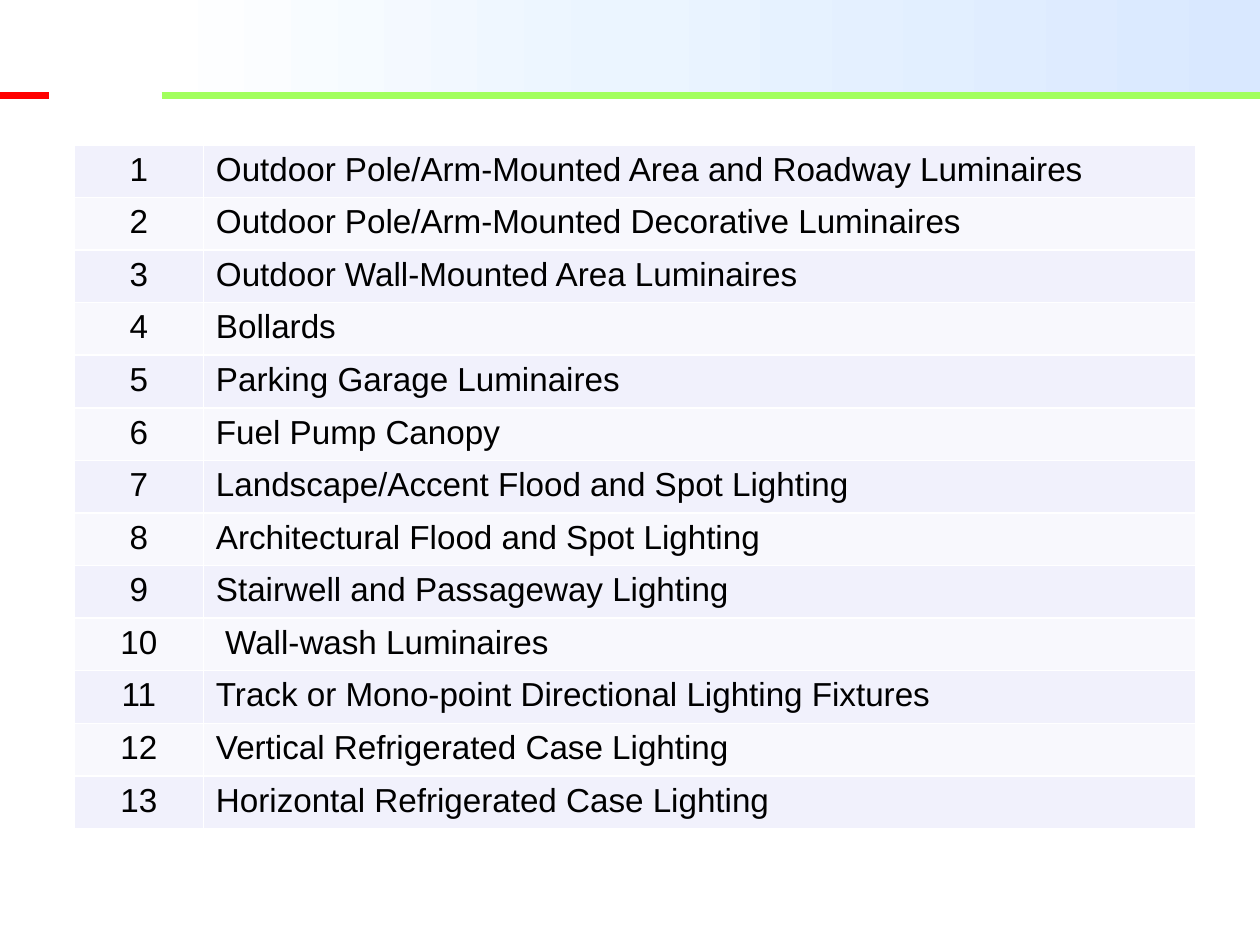
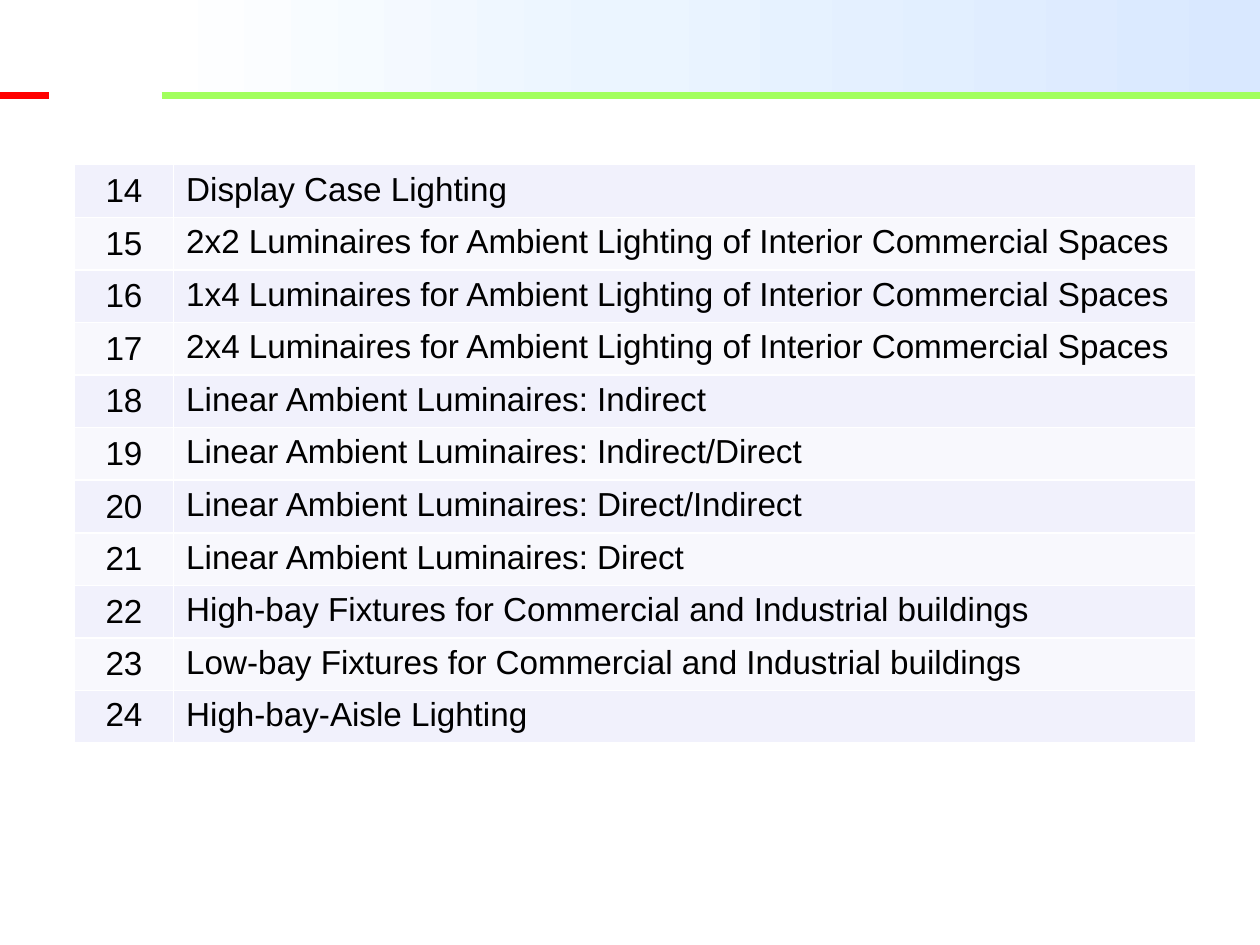
from copy import deepcopy
from dataclasses import dataclass

from lxml.etree import SubElement
from pptx import Presentation
from pptx.dml.color import RGBColor
from pptx.enum.shapes import MSO_CONNECTOR, MSO_SHAPE
from pptx.enum.text import MSO_ANCHOR, PP_ALIGN
from pptx.oxml.ns import qn
from pptx.slide import Slide
from pptx.table import _Cell as Cell
from pptx.util import Cm, Pt

# Shared colours
BLACK = RGBColor(0x00, 0x00, 0x00)
WHITE = RGBColor(0xFF, 0xFF, 0xFF)
RED = RGBColor(0xFF, 0x00, 0x00)
GREEN = RGBColor(0xA2, 0xFF, 0x5D)
ROW_FILLS = (RGBColor(0xF1, 0xF1, 0xFC), RGBColor(0xF8, 0xF8, 0xFD))
FADE = (
    (0, RGBColor(0xD9, 0xE8, 0xFF)),
    (0.51, RGBColor(0xEB, 0xF5, 0xFF)),
    (0.88, WHITE),
)

# Shared text format and lengths
BODY = {"name": "Arial", "size": Pt(19), "bold": False}
WIDE, HIGH = Cm(25.4), Cm(19.05)
RULE_Y = Cm(1.93)
LEFT, TOTAL, ROW_H = Cm(1.5), Cm(22.6), Cm(1.06)


@dataclass(frozen=True)
class Rule:
    start: int
    end: int
    color: RGBColor


@dataclass(frozen=True)
class Listing:
    top: int
    num_w: int
    first: int
    middle: int  # how many leading number cells are centred vertically
    names: tuple[str, ...]


RULES = (Rule(0, Cm(0.99), RED), Rule(Cm(3.26), WIDE, GREEN))

LISTS = (
    Listing(Cm(2.92), Cm(2.6), 1, 0, (
        "Outdoor Pole/Arm-Mounted Area and Roadway Luminaires",
        "Outdoor Pole/Arm-Mounted Decorative Luminaires",
        "Outdoor Wall-Mounted Area Luminaires",
        "Bollards",
        "Parking Garage Luminaires",
        "Fuel Pump Canopy",
        "Landscape/Accent Flood and Spot Lighting",
        "Architectural Flood and Spot Lighting",
        "Stairwell and Passageway Lighting",
        " Wall-wash Luminaires",
        "Track or Mono-point Directional Lighting Fixtures",
        "Vertical Refrigerated Case Lighting",
        "Horizontal Refrigerated Case Lighting",
    )),
    Listing(Cm(3.32), Cm(2), 14, 10, (
        "Display Case Lighting",
        *(f"{size} Luminaires for Ambient Lighting of Interior Commercial Spaces"
          for size in ("2x2", "1x4", "2x4")),
        *(f"Linear Ambient Luminaires: {beam}"
          for beam in ("Indirect", "Indirect/Direct", "Direct/Indirect", "Direct")),
        *(f"{bay}-bay Fixtures for Commercial and Industrial buildings"
          for bay in ("High", "Low")),
        "High-bay-Aisle Lighting",
    )),
)


def write(cell: Cell, text: str, align: PP_ALIGN) -> None:
    para = cell.text_frame.paragraphs[0]
    para.alignment = align
    run = para.add_run()
    run.text = text
    for key, value in BODY.items():
        setattr(run.font, key, value)
    run.font.color.rgb = BLACK


def add_band(slide: Slide) -> None:
    band = slide.shapes.add_shape(MSO_SHAPE.RECTANGLE, 0, 0, WIDE, RULE_Y)
    band.shadow.inherit = False
    band.line.fill.background()
    band.fill.gradient()
    band.fill.gradient_angle = 180
    stops = band._element.spPr.find(qn("a:gradFill")).find(qn("a:gsLst"))
    stops.append(deepcopy(stops[0]))
    for stop, (place, color) in zip(band.fill.gradient_stops, FADE):
        stop.position = place
        stop.color.rgb = color


def add_rule(slide: Slide, rule: Rule) -> None:
    line = slide.shapes.add_connector(
        MSO_CONNECTOR.STRAIGHT, rule.start, RULE_Y, rule.end, RULE_Y)
    line.line.color.rgb = rule.color
    line.line.width = Pt(4)
    SubElement(line._element.spPr, qn("a:effectLst"))


def add_list(slide: Slide, data: Listing) -> None:
    count = len(data.names)
    table = slide.shapes.add_table(
        count, 2, LEFT, data.top, TOTAL, ROW_H * count).table
    table.first_row = table.horz_banding = False
    table.columns[0].width = data.num_w
    table.columns[1].width = TOTAL - data.num_w
    for i, name in enumerate(data.names):
        table.rows[i].height = ROW_H
        num, label = table.cell(i, 0), table.cell(i, 1)
        for cell in (num, label):
            # Borders go before the fill in the cell properties
            props = cell._tc.get_or_add_tcPr()
            for side in "LRTB":
                edge = SubElement(props, qn(f"a:ln{side}"), w=str(Pt(1)))
                paint = SubElement(edge, qn("a:solidFill"))
                SubElement(paint, qn("a:srgbClr"), val=str(WHITE))
            cell.fill.solid()
            cell.fill.fore_color.rgb = ROW_FILLS[i % 2]
        write(num, str(data.first + i), PP_ALIGN.CENTER)
        write(label, name, PP_ALIGN.LEFT)
        if i < data.middle:
            num.vertical_anchor = MSO_ANCHOR.MIDDLE


def main() -> None:
    deck = Presentation()
    deck.slide_width, deck.slide_height = WIDE, HIGH
    blank = deck.slide_layouts[6]
    for data in LISTS:
        slide = deck.slides.add_slide(blank)
        # Header
        add_band(slide)
        for rule in RULES:
            add_rule(slide, rule)
        # Numbered categories
        add_list(slide, data)
    deck.save("out.pptx")


if __name__ == "__main__":
    main()
